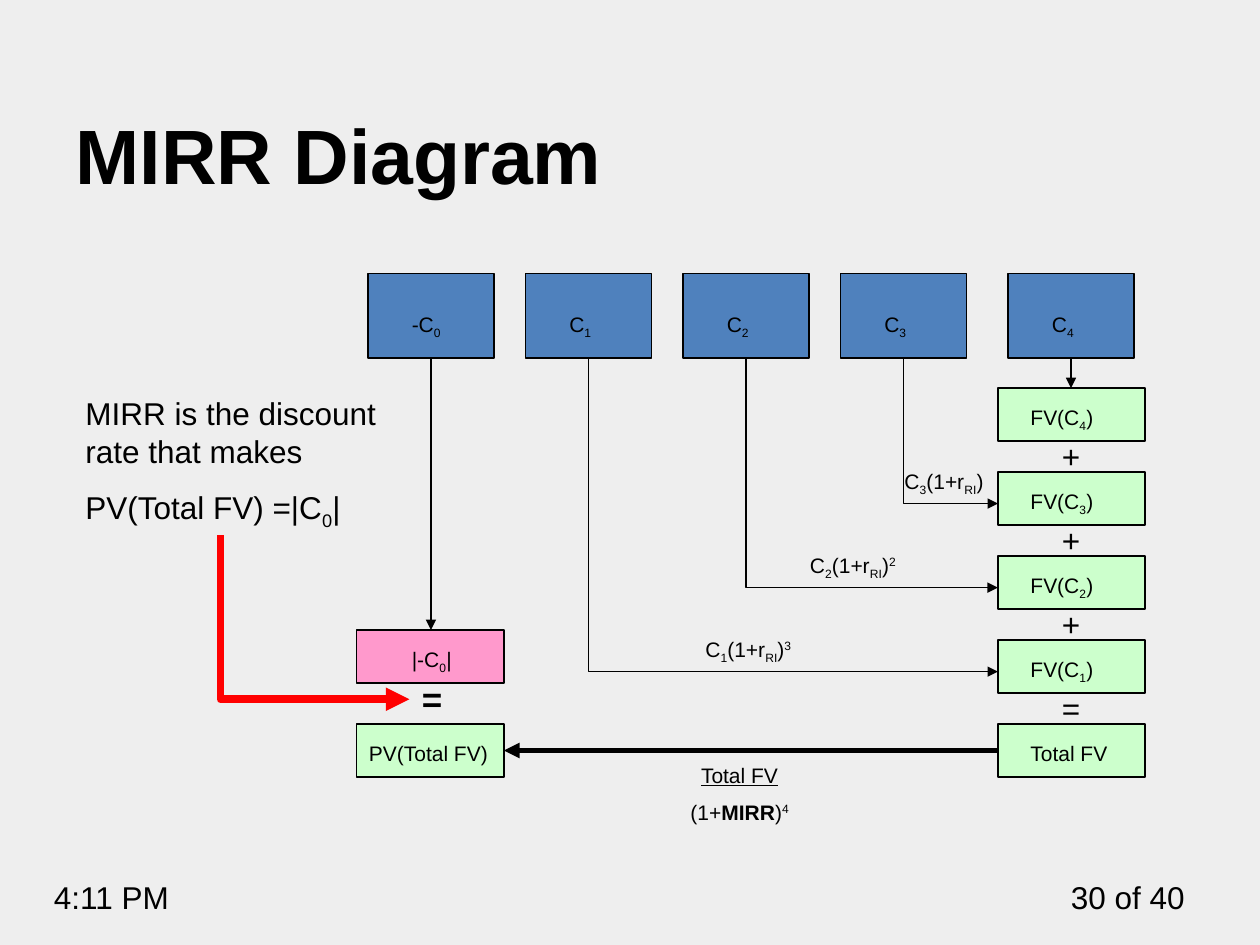
from lxml import etree
from pptx import Presentation
from pptx import util as u
from pptx.dml.color import RGBColor
from pptx.enum import shapes, text
from pptx.oxml import ns

Inches, Pt = u.Inches, u.Pt
BLACK = RGBColor(0x00, 0x00, 0x00)
RED = RGBColor(0xFF, 0x00, 0x00)
BLUE = RGBColor(0x4F, 0x81, 0xBD)
GREEN = RGBColor(0xCC, 0xFF, 0xCC)
PINK = RGBColor(0xFF, 0x99, 0xCC)
GREY = RGBColor(0xEE, 0xEE, 0xEE)
FONT = "Arial"
LEFT, CENTER, RIGHT = text.PP_ALIGN.LEFT, text.PP_ALIGN.CENTER, text.PP_ALIGN.RIGHT

# Content: a paragraph is a list of (words, style) runs
TITLE = "MIRR Diagram"
CLOCK, PAGE = "4:11 PM", "30 of 40"
CASH_FLOWS = [("-C", "0"), ("C", "1"), ("C", "2"), ("C", "3"), ("C", "4")]
CASH_LEFTS = [2.92, 4.17, 5.42, 6.67, 8]
FV_PERIODS = ["4", "3", "2", "1"]
SIGNS = ["+", "+", "+", "="]
# period: (exponent, left of growth label)
GROWTH = {"3": ("", 7.08), "2": ("2", 6.33), "1": ("3", 5.5)}
EXPLANATION = [
    [("MIRR is the discount rate that makes", "")],
    [("PV(Total FV) =|C", ""), ("0", "sub"), ("|", "")],
]
DISCOUNT = [
    [("Total FV", "underline")],
    [("(1+", ""), ("MIRR", "bold"), (")", ""), ("4", "sup")],
]
BASELINES = {"sub": "-25000", "sup": "30000"}

# Layout
CASH_TOP, CASH_W, CASH_H = 2.17, 1, 0.67
CASH_BOTTOM = CASH_TOP + CASH_H
ROW_TOP, ROW_PITCH = 3.08, 2 / 3
BOX_W, BOX_H = 1.17, 0.42
FV_LEFT, PV_LEFT = 7.92, 2.83
ABS_TOP = 5

presentation = Presentation()
presentation.slide_width, presentation.slide_height = Inches(10), Inches(7.5)
slide = presentation.slides.add_slide(presentation.slide_layouts[5])
slide.background.fill.solid()
slide.background.fill.fore_color.rgb = GREY


def add_runs(paragraph, runs, size):
    for words, style in runs:
        run = paragraph.add_run()
        run.text = words
        font = run.font
        font.name, font.size, font.color.rgb = FONT, Pt(size), BLACK
        if style == "bold":
            font.bold = True
        elif style == "underline":
            font.underline = True
        elif style in BASELINES:
            run._r.get_or_add_rPr().set("baseline", BASELINES[style])


def add_label(left, top, width, height, paragraphs, size=12, align=LEFT):
    label = slide.shapes.add_textbox(
        Inches(left), Inches(top), Inches(width), Inches(height))
    frame = label.text_frame
    frame.word_wrap = True
    frame.auto_size = text.MSO_AUTO_SIZE.SHAPE_TO_FIT_TEXT
    for index, runs in enumerate(paragraphs):
        paragraph = frame.add_paragraph() if index else frame.paragraphs[0]
        paragraph.alignment = align
        if index:
            paragraph.space_before = Pt(round(size * 0.57, 1))
        add_runs(paragraph, runs, size)


def add_box(left, top, width, height, color):
    box = slide.shapes.add_shape(
        shapes.MSO_SHAPE.FLOWCHART_PROCESS,
        Inches(left), Inches(top), Inches(width), Inches(height))
    box.shadow.inherit = False
    box.fill.solid()
    box.fill.fore_color.rgb = color
    box.line.color.rgb = BLACK
    box.line.width = Pt(1)


def add_arrow(start, end, color=BLACK, width=1, bent=False):
    """Bent arrows run down first, then across."""
    kind = shapes.MSO_CONNECTOR.ELBOW if bent else shapes.MSO_CONNECTOR.STRAIGHT
    arrow = slide.shapes.add_connector(
        kind, *(Inches(value) for value in (*start, *end)))
    arrow.line.color.rgb = color
    arrow.line.width = Pt(width)
    properties = arrow._element.spPr
    line = properties.find(ns.qn("a:ln"))
    etree.SubElement(line, ns.qn("a:tailEnd"), type="triangle")
    etree.SubElement(properties, ns.qn("a:effectLst"))
    if bent:
        geometry = properties.find(ns.qn("a:prstGeom"))
        guides = geometry.find(ns.qn("a:avLst"))
        if guides is None:
            guides = etree.SubElement(geometry, ns.qn("a:avLst"))
        etree.SubElement(guides, ns.qn("a:gd"), name="adj1", fmla="val 0")


# Title, clock and page count
title = slide.shapes.title
title.left, title.top = Inches(0.5), Inches(0.39)
title.width, title.height = Inches(9), Inches(1.25)
title.text_frame.vertical_anchor = text.MSO_ANCHOR.BOTTOM
title.text_frame.paragraphs[0].alignment = LEFT
add_runs(title.text_frame.paragraphs[0], [(TITLE, "bold")], 44)
add_label(0.33, 6.92, 1.58, 0.4, [[(CLOCK, "")]], 18)
add_label(8.33, 6.92, 1.17, 0.4, [[(PAGE, "")]], 18, RIGHT)

# Cash flows along the top
cash_centers = {}
for (name, period), left in zip(CASH_FLOWS, CASH_LEFTS):
    cash_centers[period] = left + CASH_W / 2
    add_box(left, CASH_TOP, CASH_W, CASH_H, BLUE)
    add_label(left + 0.25, CASH_TOP + 0.25, 0.5, 0.3,
              [[(name, ""), (period, "sub")]])
add_arrow((cash_centers["0"], CASH_BOTTOM), (cash_centers["0"], ABS_TOP))
add_arrow((cash_centers["4"], CASH_BOTTOM), (cash_centers["4"], ROW_TOP))

# Future values, each reached from its cash flow
for row, (period, sign) in enumerate(zip(FV_PERIODS, SIGNS)):
    top = ROW_TOP + row * ROW_PITCH
    add_box(FV_LEFT, top, BOX_W, BOX_H, GREEN)
    add_label(FV_LEFT + 0.16, top + 0.08, 0.75, 0.3,
              [[("FV(C", ""), (period, "sub"), (")", "")]])
    add_label(8.33, top + 0.34, 0.33, 0.4, [[(sign, "")]], 18)
    if period in GROWTH:
        exponent, label_left = GROWTH[period]
        add_arrow((cash_centers[period], CASH_BOTTOM),
                  (FV_LEFT, top + 0.25), bent=True)
        runs = [("C", ""), (period, "sub"), ("(1+r", ""), ("RI", "sub"), (")", "")]
        if exponent:
            runs.append((exponent, "sup"))
        add_label(label_left, top - 0.08, 1, 0.3, [runs])

# Total future value discounted back to today
total_top = ROW_TOP + len(FV_PERIODS) * ROW_PITCH
total_middle = total_top + BOX_H / 2
add_box(FV_LEFT, total_top, BOX_W, BOX_H, GREEN)
add_label(FV_LEFT + 0.16, total_top + 0.08, 0.92, 0.3, [[("Total FV", "")]])
add_arrow((FV_LEFT, total_middle), (PV_LEFT + BOX_W, total_middle), width=3)
add_label(5.08, 6, 1.58, 0.6, DISCOUNT, align=CENTER)

# Present value set equal to the initial outlay
add_box(PV_LEFT, ABS_TOP, BOX_W, BOX_H, PINK)
add_label(PV_LEFT + 0.34, ABS_TOP + 0.08, 0.58, 0.3,
          [[("|-C", ""), ("0", "sub"), ("|", "")]])
add_label(3.25, 5.33, 0.33, 0.43, [[("=", "bold")]], 20)
add_box(PV_LEFT, total_top, BOX_W, BOX_H, GREEN)
add_label(PV_LEFT, total_top + 0.08, BOX_W, 0.3, [[("PV(Total FV)", "")]])

# Explanation
add_label(0.58, 3.08, 2.75, 1.15, EXPLANATION, 18)
add_arrow((1.75, 4.25), (3.25, 5.55), RED, 4.5, bent=True)

presentation.save("out.pptx")
